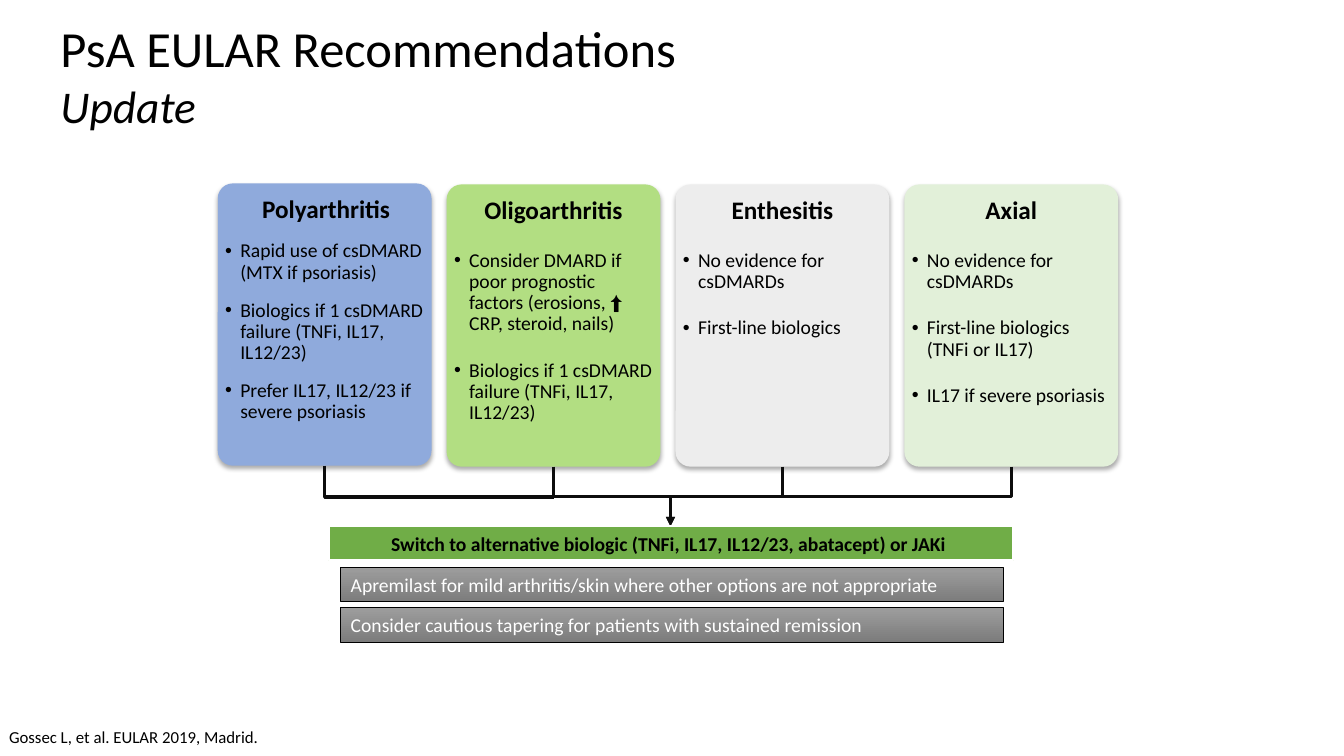
from dataclasses import dataclass

from lxml.etree import SubElement
from pptx import Presentation
from pptx.dml.color import RGBColor
from pptx.enum.shapes import MSO_CONNECTOR as Connector, MSO_SHAPE as Preset
from pptx.enum.text import MSO_ANCHOR as Anchor, MSO_AUTO_SIZE as AutoSize, PP_ALIGN as Align
from pptx.oxml.ns import qn
from pptx.util import Emu, Pt

EMU_PER_PX = 9144


@dataclass(frozen=True)
class Theme:
    font: str = "Calibri"
    title_size: float = 36.1
    subtitle_size: float = 32.4
    heading_size: int = 18
    body_size: int = 14
    citation_size: int = 12
    black: str = "000000"
    white: str = "FFFFFF"
    connector: str = "0D0D0D"
    polyarthritis: str = "8FAADC"
    oligoarthritis: str = "B2DE82"
    enthesitis: str = "EDEDED"
    axial: str = "E2F0D9"
    switch: str = "70AD47"
    bar_top: str = "9D9D9D"
    bar_bottom: str = "7C7C7C"


def px(length):
    return Emu(round(length * EMU_PER_PX))


def rgb(code):
    return RGBColor.from_string(code)


def add_xml(parent, tag, **attributes):
    return SubElement(parent, qn(tag), {name: str(value) for name, value in attributes.items()})


def format_text(paragraph, text, *, font, size, color, bold=False, italic=False,
                align=Align.LEFT, line_spacing=1.0, space_before=0):
    """Fill the paragraph with text in the given format."""
    paragraph.text = text
    paragraph.alignment = align
    paragraph.line_spacing = line_spacing
    paragraph.space_before = Pt(space_before)
    for run in paragraph.runs:
        run.font.name = font
        run.font.size = Pt(size)
        run.font.bold = bold
        run.font.italic = italic
        run.font.color.rgb = rgb(color)
    for line_break in paragraph._p.findall(qn("a:br")):
        add_xml(line_break, "a:rPr", sz=round(size * 100))


def add_bullet(paragraph, indent):
    properties = paragraph._p.get_or_add_pPr()
    properties.set("marL", str(px(indent)))
    properties.set("indent", str(-px(indent)))
    add_xml(properties, "a:buFont", typeface="Arial")
    add_xml(properties, "a:buChar", char="•")


def add_soft_shadow(shape):
    shape.shadow.inherit = False
    effects = shape._element.spPr.find(qn("a:effectLst"))
    shadow = add_xml(effects, "a:outerShdw", blurRad=Pt(3.5), dist=Pt(2.2),
                     dir=5400000, algn="t", rotWithShape=0)
    color = add_xml(shadow, "a:srgbClr", val="000000")
    add_xml(color, "a:alpha", val=32000)


class SlideBuilder:
    def __init__(self, slide, theme):
        self.slide = slide
        self.theme = theme

    def set_text(self, paragraph, text, **style):
        format_text(paragraph, text, **{"font": self.theme.font, "size": self.theme.body_size,
                                        "color": self.theme.black, **style})

    def set_frame(self, frame, margins, anchor, wrap=True):
        frame.margin_left, frame.margin_top, frame.margin_right, frame.margin_bottom = map(px, margins)
        frame.vertical_anchor = anchor
        frame.word_wrap = wrap
        frame.auto_size = AutoSize.NONE

    def title(self, box, title, subtitle):
        shape = self.slide.shapes.title
        shape.left, shape.top, shape.width, shape.height = map(px, box)
        frame = shape.text_frame
        self.set_frame(frame, (10, 5, 10, 5), Anchor.MIDDLE)
        self.set_text(frame.paragraphs[0], title, size=self.theme.title_size)
        self.set_text(frame.add_paragraph(), subtitle, size=self.theme.subtitle_size, italic=True)

    def citation(self, box, text):
        frame = self.slide.shapes.add_textbox(*map(px, box)).text_frame
        self.set_frame(frame, (3, 3, 3, 3), Anchor.BOTTOM, wrap=False)
        self.set_text(frame.paragraphs[0], text, size=self.theme.citation_size)

    def card(self, box, heading, bullets, color, spacing, right_margin):
        shape = self.slide.shapes.add_shape(Preset.ROUNDED_RECTANGLE, *map(px, box))
        shape.adjustments[0] = 0.07
        shape.fill.solid()
        shape.fill.fore_color.rgb = rgb(color)
        shape.line.fill.background()
        add_soft_shadow(shape)
        frame = shape.text_frame
        self.set_frame(frame, (3, 9, right_margin, 4), Anchor.TOP)
        spacing_style = {"line_spacing": 0.9, "space_before": spacing}
        self.set_text(frame.paragraphs[0], heading, size=self.theme.heading_size, bold=True,
                      align=Align.CENTER, **spacing_style)
        for bullet in bullets:
            paragraph = frame.add_paragraph()
            self.set_text(paragraph, bullet, **spacing_style)
            add_bullet(paragraph, 15)

    def bar(self, box, text, fill, line_color, line_width, **style):
        """Draw a text bar; two fill colours make a vertical gradient."""
        shape = self.slide.shapes.add_shape(Preset.RECTANGLE, *map(px, box))
        shape.shadow.inherit = False
        if len(fill) == 1:
            shape.fill.solid()
            shape.fill.fore_color.rgb = rgb(fill[0])
        else:
            shape.fill.gradient()
            shape.fill.gradient_angle = 270
            for stop, color in zip(shape.fill.gradient_stops, fill):
                stop.color.rgb = rgb(color)
        shape.line.color.rgb = rgb(line_color)
        shape.line.width = Pt(line_width)
        self.set_frame(shape.text_frame, (10, 5, 10, 5), Anchor.MIDDLE)
        self.set_text(shape.text_frame.paragraphs[0], text, **style)

    def elbow(self, start, end, arrow=False):
        """Leave start downwards and turn towards end, as a quarter-turned elbow."""
        drop, run = end[1] - start[1], abs(end[0] - start[0])
        left = (start[0] + end[0] - drop) / 2
        top = (start[1] + end[1] - run) / 2
        connector = self.slide.shapes.add_connector(
            Connector.ELBOW, px(left), px(top), px(left + drop), px(top + run))
        connector.line.color.rgb = rgb(self.theme.connector)
        connector.line.width = Pt(2.25)
        properties = connector._element.spPr
        transform = properties.find(qn("a:xfrm"))
        if end[0] > start[0]:
            transform.set("rot", "16200000")
            transform.set("flipH", "1")
        else:
            transform.set("rot", "5400000")
        if arrow:
            add_xml(properties.find(qn("a:ln")), "a:tailEnd", type="triangle")
        else:
            properties.find(qn("a:prstGeom")).set("prst", "bentConnector2")
        add_xml(properties, "a:effectLst")


def main():
    presentation = Presentation()
    presentation.slide_width, presentation.slide_height = px(1333), px(750)
    slide = presentation.slides.add_slide(presentation.slide_layouts[5])
    theme = Theme()
    builder = SlideBuilder(slide, theme)

    builder.title((50, 20, 1069, 108), "PsA EULAR Recommendations", "Update")
    builder.citation((6, 718, 257, 26), "Gossec L, et al. EULAR 2019, Madrid.")

    biologics = "Biologics if 1 csDMARD failure (TNFi, IL17, \nIL12/23)"
    no_evidence = "No evidence for csDMARDs"
    cards = [
        ("Polyarthritis", theme.polyarthritis, 182, 12, 0,
         ["Rapid use of csDMARD (MTX if psoriasis)", biologics,
          "Prefer IL17, IL12/23 if severe psoriasis"]),
        ("Oligoarthritis", theme.oligoarthritis, 183, 18, 3,
         ["Consider DMARD if poor prognostic factors (erosions, ⬆ CRP, steroid, nails)", biologics]),
        ("Enthesitis", theme.enthesitis, 183, 18, 3, [no_evidence, "First-line biologics"]),
        ("Axial", theme.axial, 183, 18, 3,
         [no_evidence, "First-line biologics \n(TNFi or IL17)", "IL17 if severe psoriasis"]),
    ]
    card_width, card_height, card_pitch = 212, 280, 227
    feet = []
    for index, (heading, color, top, spacing, right_margin, bullets) in enumerate(cards):
        left = 216 + index * card_pitch
        builder.card((left, top, card_width, card_height), heading, bullets, color, spacing, right_margin)
        feet.append((left + card_width // 2, top + card_height))

    junction_y, switch_top = 493, 522
    for outer, inner in ((feet[0], feet[1]), (feet[3], feet[2])):
        builder.elbow(outer, (inner[0], junction_y))
        builder.elbow(inner, (665, switch_top), arrow=True)

    builder.bar((326, switch_top, 679, 34),
                "Switch to alternative biologic (TNFi, IL17, IL12/23, abatacept) or JAKi ",
                [theme.switch], theme.white, 1.5, bold=True, align=Align.CENTER)
    notes = ["Apremilast for mild arthritis/skin where other options are not appropriate",
             "Consider cautious tapering for patients with sustained remission"]
    for index, note in enumerate(notes):
        builder.bar((338, 563 + index * 40, 657, 34), note,
                    [theme.bar_top, theme.bar_bottom], theme.black, 0.5, color=theme.white)

    presentation.save("out.pptx")


if __name__ == "__main__":
    main()
